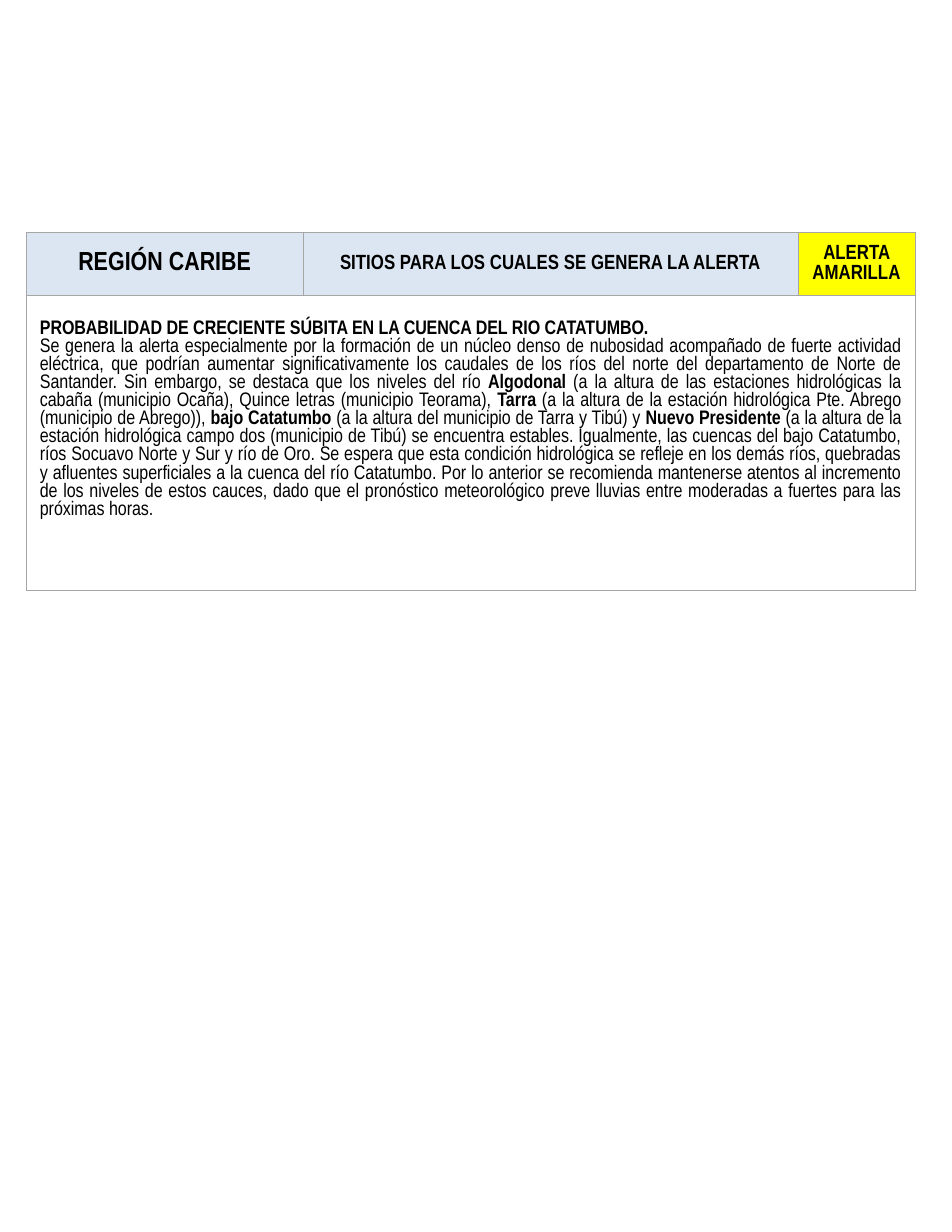
from pptx import Presentation
from pptx.dml.color import RGBColor
from pptx.enum import text
from pptx.oxml import parse_xml
from pptx.oxml.ns import nsdecls
from pptx.util import Cm, Pt

COLORS = {"black": "000000", "header": "DCE6F2", "alert": "FFFF00",
          "body": "FFFFFF", "border": "A6A6A6"}
FONT = "Arial Narrow"
COLUMNS = (5.23, 9.36, 2.21)
ROWS = (1.19, 5.57)
HEADERS = (
    ("REGIÓN CARIBE", 14, "header"),
    ("SITIOS PARA LOS CUALES SE GENERA LA ALERTA", 11, "header"),
    ("ALERTA AMARILLA", 11, "alert"),
)
HEADLINE = "PROBABILIDAD DE CRECIENTE SÚBITA EN LA CUENCA DEL RIO CATATUMBO."
REPORT = (
    ("Se genera la alerta especialmente por la formación de un núcleo denso de nubosidad "
     "acompañado de fuerte actividad eléctrica, que podrían aumentar significativamente los "
     "caudales de los ríos del norte del departamento de Norte de Santander. Sin embargo, se "
     "destaca que los niveles del río ", False),
    ("Algodonal", True),
    (" (a la altura de las estaciones hidrológicas la cabaña (municipio Ocaña), Quince letras "
     "(municipio Teorama), ", False),
    ("Tarra", True),
    (" (a la altura de la estación hidrológica Pte. Abrego (municipio de Abrego)), ", False),
    ("bajo Catatumbo ", True),
    ("(a la altura del municipio de Tarra y Tibú) y ", False),
    ("Nuevo Presidente ", True),
    ("(a la altura de la estación hidrológica campo dos (municipio de Tibú) se encuentra "
     "estables. Igualmente, las cuencas del bajo Catatumbo, ríos Socuavo Norte y Sur y río de "
     "Oro. Se espera que esta condición hidrológica se refleje en los demás ríos, quebradas y "
     "afluentes superficiales a la cuenca del río Catatumbo. Por lo anterior se recomienda "
     "mantenerse atentos al incremento de los niveles de estos cauces, dado que el pronóstico "
     "meteorológico preve lluvias entre moderadas a fuertes para las próximas horas.", False),
)


def style_cell(cell, fill):
    """Give a cell its thin grey borders and its fill."""
    properties = cell._tc.get_or_add_tcPr()
    for side in ("lnL", "lnR", "lnT", "lnB"):
        properties.append(parse_xml(
            f'<a:{side} {nsdecls("a")} w="{Pt(0.5)}"><a:solidFill>'
            f'<a:srgbClr val="{COLORS["border"]}"/></a:solidFill></a:{side}>'))
    cell.fill.solid()
    cell.fill.fore_color.rgb = RGBColor.from_string(COLORS[fill])


def style_para(para, size, align, bold=None):
    """Set the alignment and font of a paragraph."""
    para.alignment = align
    para.font.name = FONT
    para.font.size = Pt(size)
    para.font.bold = bold
    para.font.color.rgb = RGBColor.from_string(COLORS["black"])


def fill_header(cells):
    """Write the region, the subject and the alert level in the top row."""
    for cell, (label, size, fill) in zip(cells, HEADERS):
        cell.text = label
        cell.vertical_anchor = text.MSO_ANCHOR.MIDDLE
        style_para(cell.text_frame.paragraphs[0], size, text.PP_ALIGN.CENTER, True)


def fill_report(cell):
    """Write the headline and the report with its river names in bold."""
    cell.margin_top = Cm(0.46)
    headline = cell.text_frame.paragraphs[0]
    headline.text = HEADLINE
    style_para(headline, 10.5, text.PP_ALIGN.JUSTIFY, True)
    report = cell.text_frame.add_paragraph()
    style_para(report, 10.5, text.PP_ALIGN.JUSTIFY)
    for words, bold in REPORT:
        span = report.add_run()
        span.text = words
        span.font.bold = bold


def add_alert_table(page, left, top):
    """Place the alert table with its top left corner at the given point."""
    table = page.shapes.add_table(len(ROWS), len(COLUMNS), Cm(left), Cm(top),
                                  Cm(sum(COLUMNS)), Cm(sum(ROWS))).table
    for column, width in zip(table.columns, COLUMNS):
        column.width = Cm(width)
    for row, height in zip(table.rows, ROWS):
        row.height = Cm(height)
    for index, (_, _, fill) in enumerate(HEADERS):
        style_cell(table.cell(0, index), fill)
        style_cell(table.cell(1, index), "body")
    table.cell(1, 0).merge(table.cell(1, len(COLUMNS) - 1))
    fill_header(table.rows[0].cells)
    fill_report(table.cell(1, 0))


def main():
    """Build the one-page alert bulletin."""
    deck = Presentation()
    deck.slide_width, deck.slide_height = Cm(18), Cm(23.3)
    page = deck.slides.add_slide(deck.slide_layouts[6])
    add_alert_table(page, 0.5, 4.4)
    deck.save("out.pptx")


if __name__ == "__main__":
    main()
